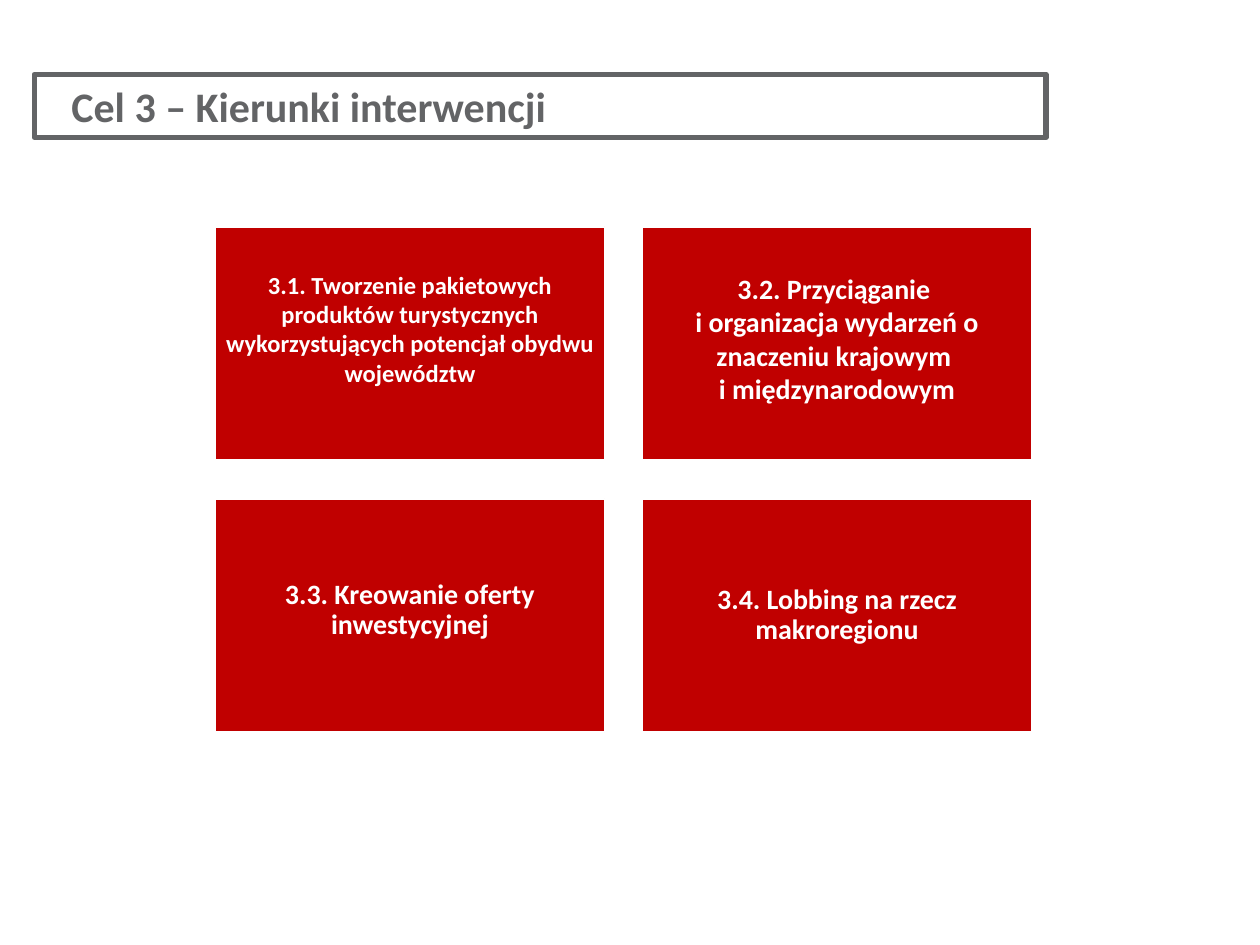
from lxml.etree import SubElement
from pptx import Presentation
from pptx.dml.color import RGBColor as RGB
from pptx.enum.shapes import MSO_SHAPE as Shape
from pptx.enum.text import MSO_ANCHOR as Anchor, MSO_AUTO_SIZE as Fit, PP_ALIGN as Align
from pptx.oxml.ns import qn
from pptx.util import Cm, Pt

COLORS = {"red": "C00000", "white": "FFFFFF", "gray": "636466"}
CARDS = [
    ("3.1. Tworzenie pakietowych produktów turystycznych "
     "wykorzystujących potencjał obydwu województw", 14, 1, 0.15, 0.6),
    ("3.2. Przyciąganie \vi organizacja wydarzeń "
     "o znaczeniu krajowym \vi międzynarodowym", 16, 1, 0.17, 0.2),
    ("3.3. Kreowanie oferty inwestycyjnej", 16, 0.9, 0.17, 0.2),
    ("3.4. Lobbing na rzecz makroregionu", 16, 0.9, 0.17, 0),
]


def color(name):
    return RGB.from_string(COLORS[name])


def add_box(slide, x, y, w, h, edge, width):
    box = slide.shapes.add_shape(Shape.RECTANGLE, Cm(x), Cm(y), Cm(w), Cm(h))
    box.shadow.inherit = False
    box.line.color.rgb = color(edge)
    box.line.width = Pt(width)
    return box


def set_text(frame, text, size, ink, align):
    frame.word_wrap = True
    frame.text = text
    para = frame.paragraphs[0]
    para.alignment = align
    for run in para.runs:
        font = run.font
        font.name, font.size, font.bold = "Calibri", Pt(size), True
        font.color.rgb = color(ink)
    return para


def add_title(slide, text):
    box = add_box(slide, 0.69, 1.5, 20.4, 1.27, "gray", 3)
    box.fill.background()
    SubElement(box.line._get_or_add_ln(), qn("a:round"))
    frame = box.text_frame
    frame.vertical_anchor = Anchor.TOP
    frame.auto_size = Fit.SHAPE_TO_FIT_TEXT
    para = set_text(frame, text, 24, "gray", Align.JUSTIFY)
    para.space_after = Pt(6)
    para._p.get_or_add_pPr().set("marL", str(Cm(0.5)))


def add_card(slide, x, y, text, size, pitch, pad, lift):
    box = add_box(slide, x, y, 7.85, 4.7, "white", 1)
    box.fill.solid()
    box.fill.fore_color.rgb = color("red")
    frame = box.text_frame
    frame.vertical_anchor = Anchor.MIDDLE
    frame.margin_left = frame.margin_right = frame.margin_top = Cm(pad)
    frame.margin_bottom = Cm(pad + lift)
    para = set_text(frame, text, size, "white", Align.CENTER)
    para.line_spacing = pitch


def main():
    """Build the slide with a framed title and a two-by-two grid of cards."""
    deck = Presentation()
    deck.slide_width, deck.slide_height = Cm(25.4), Cm(19.05)
    slide = deck.slides.add_slide(deck.slide_layouts[6])
    for i, card in enumerate(CARDS):
        row, col = divmod(i, 2)
        add_card(slide, 4.34 + 8.61 * col, 4.57 + 5.49 * row, *card)
    add_title(slide, "Cel 3 – Kierunki interwencji")
    deck.save("out.pptx")


if __name__ == "__main__":
    main()
